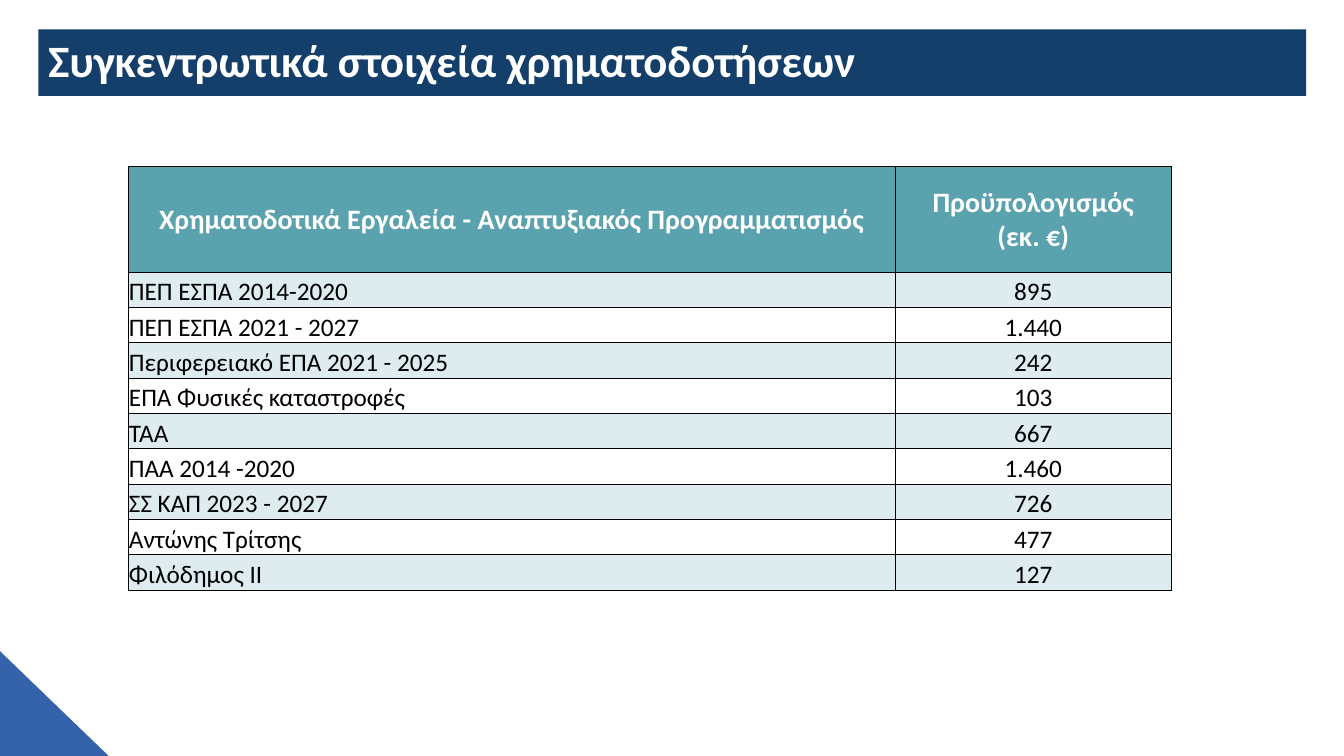
from pptx import Presentation
from pptx.dml.color import RGBColor
from pptx.enum.shapes import MSO_SHAPE as Shape
from pptx.enum.text import MSO_ANCHOR as Anchor, PP_ALIGN as Align
from pptx.oxml import parse_xml
from pptx.oxml.ns import nsdecls
from pptx.util import Cm, Pt

NAVY, BLUE, TEAL, PALE = "143F6A", "3462AB", "5AA2AE", "DEECEF"
WHITE, BLACK = "FFFFFF", "000000"

HEADS = ("Χρηματοδοτικά Εργαλεία - Αναπτυξιακός Προγραμματισμός",
         "Προϋπολογισμός\n(εκ. €)")
FUNDS = (
    ("ΠΕΠ ΕΣΠΑ 2014-2020", "895"),
    ("ΠΕΠ ΕΣΠΑ 2021 - 2027", "1.440"),
    ("Περιφερειακό ΕΠΑ 2021 - 2025", "242"),
    ("ΕΠΑ Φυσικές καταστροφές", "103"),
    ("ΤΑΑ", "667"),
    ("ΠΑΑ 2014 -2020", "1.460"),
    ("ΣΣ ΚΑΠ 2023 - 2027", "726"),
    ("Αντώνης Τρίτσης", "477"),
    ("Φιλόδημος II", "127"),
)
WIDTHS = Cm(19.33), Cm(6.96)
HEAD_ROW, FUND_ROW = Cm(2.67), Cm(0.89)

TITLE = {"size": Pt(32), "bold": True}
HEAD = {"size": Pt(20), "bold": True}
BODY = {"size": Pt(18), "bold": False}
INSETS = {"margin_left": Cm(0.02), "margin_right": Cm(0.02),
          "margin_top": Cm(0.02), "margin_bottom": Cm(0)}


def paint(fill, color):
    fill.solid()
    fill.fore_color.rgb = RGBColor.from_string(color)


def apply(item, values):
    for name, value in values.items():
        setattr(item, name, value)


def write(frame, text, look, color, align):
    para = frame.paragraphs[0]
    para.text = text
    para.alignment = align
    apply(para.font, {"name": "Calibri", **look})
    paint(para.font.fill, color)
    return para


def add_block(slide, kind, box, color):
    block = slide.shapes.add_shape(kind, *map(Cm, box))
    block.shadow.inherit = False
    paint(block.fill, color)
    block.line.fill.background()
    return block


def add_title(slide, text):
    bar = add_block(slide, Shape.RECTANGLE, (0.97, 0.74, 31.95, 1.68), NAVY)
    apply(bar.text_frame, {"word_wrap": True, "vertical_anchor": Anchor.MIDDLE})
    write(bar.text_frame, text, TITLE, WHITE, Align.LEFT).line_spacing = 0.9


def add_edges(cell, color):
    """Draw a 1 pt line on all four sides; call before the cell is filled."""
    props = cell._tc.get_or_add_tcPr()
    for side in "LRTB":
        props.append(parse_xml(
            f'<a:ln{side} {nsdecls("a")} w="{Pt(1)}"><a:solidFill>'
            f'<a:srgbClr val="{color}"/></a:solidFill></a:ln{side}>'))


def fill_cell(cell, text, look, ink, back, align, anchor):
    write(cell.text_frame, text, look, ink, align)
    apply(cell, {**INSETS, "vertical_anchor": anchor})
    add_edges(cell, BLACK)
    paint(cell.fill, back)


def add_funds(slide):
    count = len(FUNDS)
    table = slide.shapes.add_table(
        count + 1, len(HEADS), Cm(3.23), Cm(4.19),
        sum(WIDTHS), HEAD_ROW + count * FUND_ROW).table
    apply(table, {"first_row": False, "horz_banding": False})
    for col, width in zip(table.columns, WIDTHS):
        col.width = width
    table.rows[0].height = HEAD_ROW
    for col, text in enumerate(HEADS):
        fill_cell(table.cell(0, col), text, HEAD, WHITE, TEAL,
                  Align.CENTER, Anchor.MIDDLE)
    for row, fund in enumerate(FUNDS, 1):
        table.rows[row].height = FUND_ROW
        back = PALE if row % 2 else WHITE
        for col, text in enumerate(fund):
            align = Align.CENTER if col else Align.LEFT
            fill_cell(table.cell(row, col), text, BODY, BLACK, back,
                      align, Anchor.BOTTOM)


def main():
    deck = Presentation()
    apply(deck, {"slide_width": Cm(33.87), "slide_height": Cm(19.05)})
    slide = deck.slides.add_slide(deck.slide_layouts[6])
    add_block(slide, Shape.RIGHT_TRIANGLE, (0, 16.41, 2.74, 2.64), BLUE)
    add_title(slide, "Συγκεντρωτικά στοιχεία χρηματοδοτήσεων")
    add_funds(slide)
    deck.save("out.pptx")


if __name__ == "__main__":
    main()
